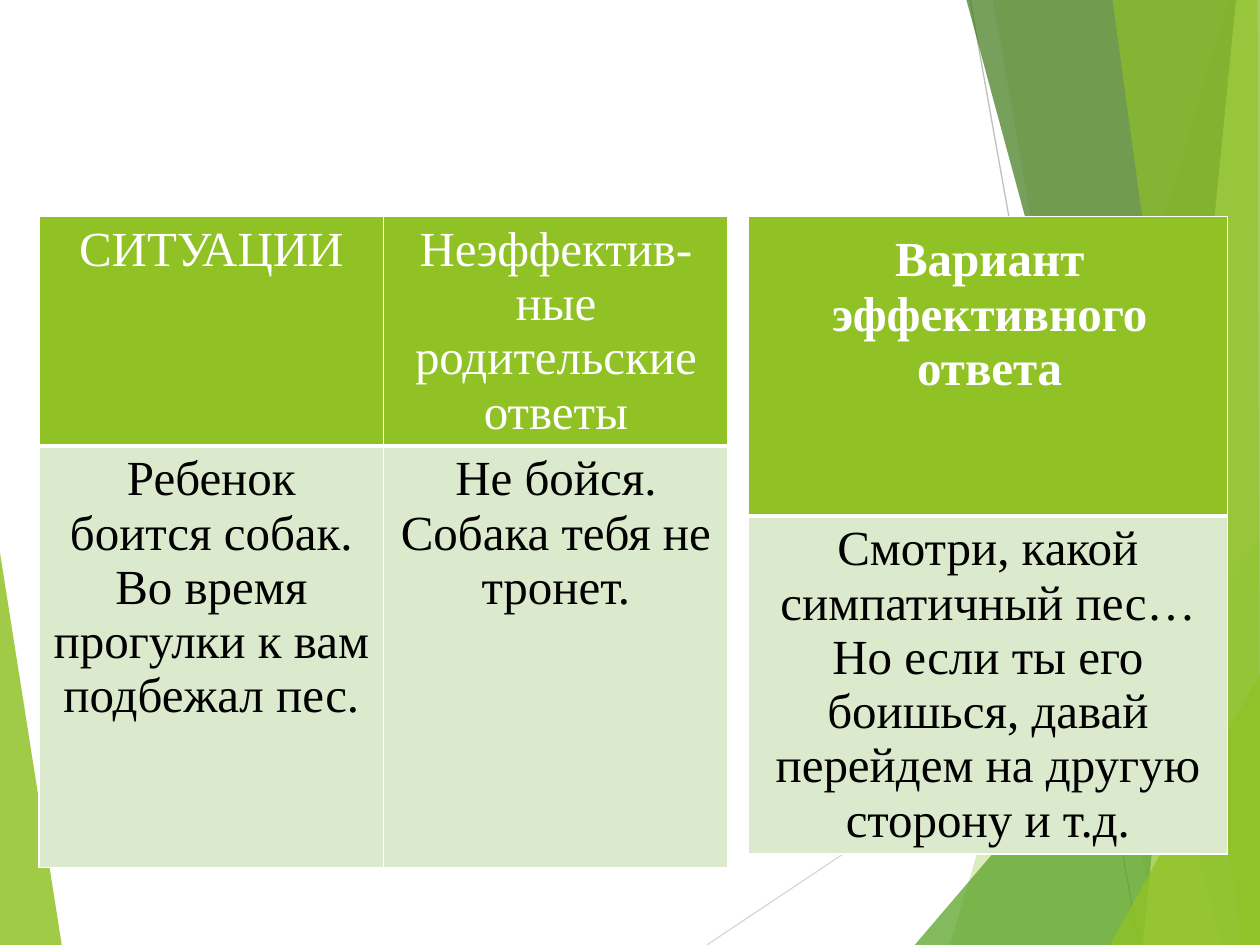
from pptx import Presentation
from pptx.dml.color import RGBColor as Rgb
from pptx.enum.shapes import MSO_CONNECTOR as Connector
from pptx.enum.text import PP_ALIGN as Align
from pptx.oxml.ns import qn
from pptx.util import Inches, Pt
from lxml.etree import SubElement

COLORS = {
    "lime": "90C226", "green": "54A021", "forest": "3F7819", "pale": "C0E474",
    "mint": "DBE9CD", "white": "FFFFFF", "black": "000000",
    "silver": "D9D9D9", "gray": "BFBFBF",
}
PLAIN_GRID = "{2D5ABB26-0587-4C30-8999-92F81FD0307C}"

deck = Presentation()
deck.slide_width, deck.slide_height = Inches(10), Inches(7.5)
across, down = deck.slide_width / 100, deck.slide_height / 100
slide = deck.slides.add_slide(deck.slide_layouts[6])


def write(cell, text, color="black", bold=False, size=28, font="Times New Roman"):
    paragraph = cell.text_frame.paragraphs[0]
    paragraph.alignment = Align.CENTER
    run = paragraph.add_run()
    run.text = text
    run.font.name, run.font.size, run.font.bold = font, Pt(size), bold
    run.font.color.rgb = Rgb.from_string(COLORS[color])


def add_border(cell, side, width):
    edge = SubElement(cell._tc.get_or_add_tcPr(), qn(f"a:ln{side}"), w=str(Pt(width)))
    SubElement(SubElement(edge, qn("a:solidFill")), qn("a:srgbClr"), val=COLORS["white"])


rays = [
    ((56.1, 100), (100, 60.9), "silver"),
    ((77, 0), (90.4, 100), "gray"),
]
for (x1, y1), (x2, y2), color in rays:
    ray = slide.shapes.add_connector(
        Connector.STRAIGHT, int(x1 * across), int(y1 * down), int(x2 * across), int(y2 * down))
    ray.line.color.rgb = Rgb.from_string(COLORS[color])
    ray.line.width = Pt(0.75)
    SubElement(ray._element.spPr, qn("a:effectLst"))

facets = [
    ([(0, 58.5), (4.9, 100), (0, 100)], "lime", 85),
    ([(97.5, 0), (75.4, 100), (100, 100), (100, 0)], "lime", 30),
    ([(78.8, 0), (91.9, 100), (100, 100), (100, 0)], "lime", 20),
    ([(72.6, 100), (100, 57.2), (100, 100)], "green", 72),
    ([(76.7, 0), (97, 100), (100, 100), (100, 0)], "forest", 70),
    ([(98.1, 0), (90.7, 100), (100, 100), (100, 0)], "pale", 70),
    ([(88.3, 0), (98.6, 100), (100, 100), (99.8, 0)], "lime", 65),
    ([(88.1, 100), (100, 71.3), (100, 100)], "lime", 80),
]
for corners, color, opacity in facets:
    start, *others = [(x * across, y * down) for x, y in corners]
    outline = slide.shapes.build_freeform(*start)
    outline.add_line_segments(others, close=True)
    facet = outline.convert_to_shape()
    facet.shadow.inherit = False
    facet.line.fill.background()
    facet.fill.solid()
    facet.fill.fore_color.rgb = Rgb.from_string(COLORS[color])
    tint = facet._element.spPr.find(f"{qn('a:solidFill')}/{qn('a:srgbClr')}")
    SubElement(tint, qn("a:alpha"), val=str(opacity * 1000))

situations = [
    ["СИТУАЦИИ", "Неэффектив-ные родительские ответы"],
    ["Ребенок боится собак. Во время прогулки к вам подбежал пес.",
     "Не бойся. Собака тебя не тронет."],
]
answer = [
    [""],
    ["Смотри, какой симпатичный пес… Но если ты его боишься, "
     "давай перейдем на другую сторону и т.д."],
]
answer_heading = [["Вариант эффективного ответа"]]

tables = [
    (situations, 3.1, 22.9, 54.7, [24.2, 44.6], True, False),
    (answer, 59.4, 22.9, 38, [31.7, 35.7], True, False),
    (answer_heading, 60.2, 24, 36.7, [21.1], False, True),
]
for rows, left, top, width, heights, bordered, bold in tables:
    table = slide.shapes.add_table(
        len(rows), len(rows[0]), int(left * across), int(top * down),
        int(width * across), int(sum(heights) * down)).table
    table._tbl.tblPr.find(qn("a:tableStyleId")).text = PLAIN_GRID
    for r, (texts, height) in enumerate(zip(rows, heights)):
        table.rows[r].height = int(height * down)
        for c, text in enumerate(texts):
            cell = table.cell(r, c)
            if bordered:
                for side in "LRTB":
                    divider = (r, side) in [(0, "B"), (1, "T")]
                    add_border(cell, side, 3 if divider else 1)
            cell.fill.solid()
            cell.fill.fore_color.rgb = Rgb.from_string(COLORS["mint" if r else "lime"])
            if text:
                write(cell, text, color="black" if r else "white", bold=bold)

deck.save("out.pptx")
